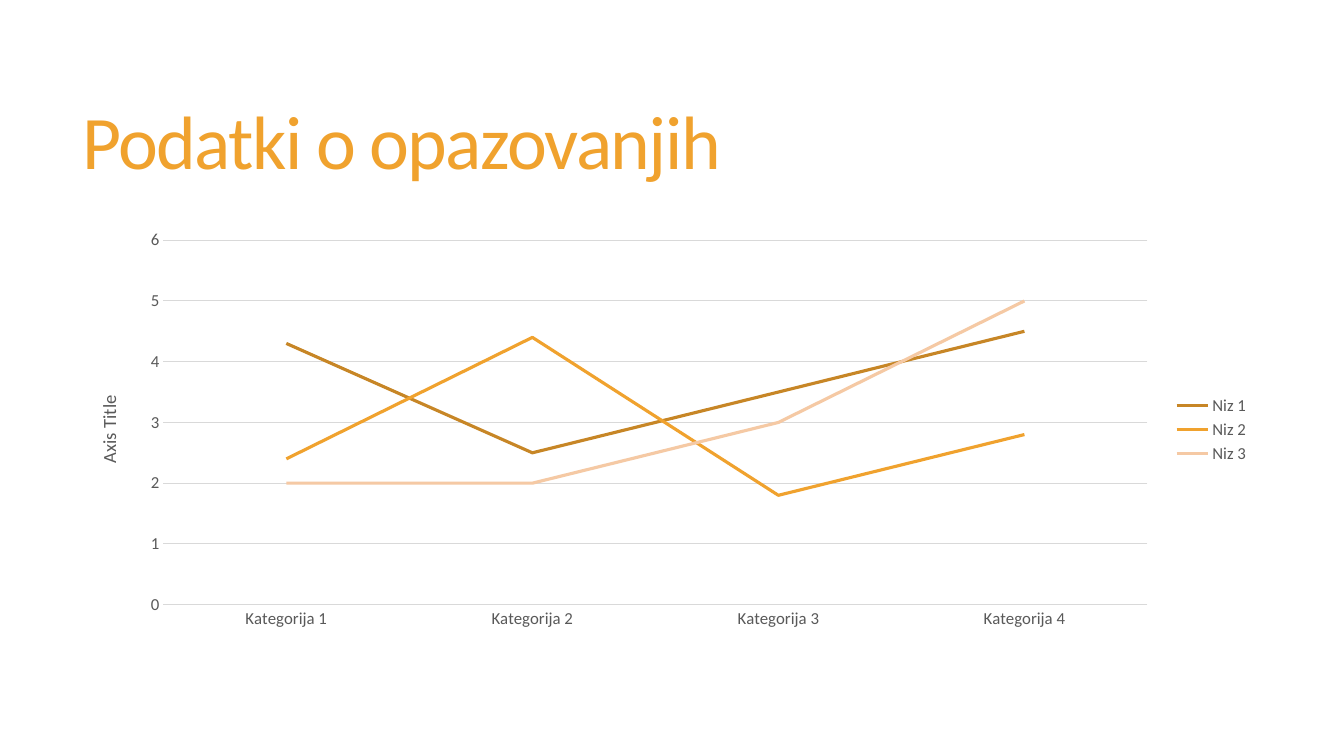
from pptx import Presentation
from pptx.chart.data import CategoryChartData
from pptx.dml.color import RGBColor
from pptx.enum.chart import XL_CHART_TYPE, XL_LEGEND_POSITION, XL_TICK_MARK
from pptx.enum.text import MSO_ANCHOR
from pptx.util import Pt

FONT = "Calibri"
COLORS = {
    "title": "F0A22E",
    "text": "595959",
    "grid": "D9D9D9",
    "Niz 1": "C78626",
    "Niz 2": "F0A22E",
    "Niz 3": "F5C9A4",
}
CATS = [f"Kategorija {n}" for n in range(1, 5)]
SERIES = {
    "Niz 1": (4.3, 2.5, 3.5, 4.5),
    "Niz 2": (2.4, 4.4, 1.8, 2.8),
    "Niz 3": (2, 2, 3, 5),
}


def rgb(name):
    return RGBColor.from_string(COLORS[name])


def set_font(font, size, color):
    font.name = FONT
    font.size = Pt(size)
    font.bold = False
    font.color.rgb = rgb(color)


def set_line(line, width, color):
    line.width = Pt(width)
    line.color.rgb = rgb(color)


def add_title(slide, box, text):
    frame = slide.shapes.add_textbox(*map(Pt, box)).text_frame
    frame.word_wrap = True
    frame.vertical_anchor = MSO_ANCHOR.MIDDLE
    frame.text = text
    para = frame.paragraphs[0]
    para.line_spacing = 0.85
    run = para.runs[0]
    set_font(run.font, 54, "title")
    run.font._element.set("spc", "-120")


def style_axes(chart):
    for axis in (chart.category_axis, chart.value_axis):
        axis.major_tick_mark = XL_TICK_MARK.NONE
        axis.minor_tick_mark = XL_TICK_MARK.NONE
        set_font(axis.tick_labels.font, 12, "text")
    set_line(chart.category_axis.format.line, 0.75, "grid")

    values = chart.value_axis
    values.minimum_scale, values.maximum_scale = 0, 6
    values.major_unit = 1
    values.format.line.fill.background()
    set_line(values.major_gridlines.format.line, 0.75, "grid")
    frame = values.axis_title.text_frame
    frame.text = "Axis Title"
    frame._txBody.bodyPr.set("rot", "-5400000")
    frame._txBody.bodyPr.set("vert", "horz")
    set_font(frame.paragraphs[0].runs[0].font, 13.3, "text")


def add_lines(slide, box):
    """Draw the line chart with its axes and legend."""
    data = CategoryChartData()
    data.categories = CATS
    for name, values in SERIES.items():
        data.add_series(name, values)
    chart = slide.shapes.add_chart(XL_CHART_TYPE.LINE, *map(Pt, box), data).chart
    chart.has_title = False
    set_font(chart.font, 12, "text")
    style_axes(chart)

    chart.has_legend = True
    chart.legend.position = XL_LEGEND_POSITION.RIGHT
    chart.legend.include_in_layout = False
    set_font(chart.legend.font, 12, "text")

    plot = chart.plots[0]
    plot.vary_by_categories = False
    for series in plot.series:
        series.smooth = False
        set_line(series.format.line, 2.25, series.name)


def main():
    deck = Presentation()
    deck.slide_width, deck.slide_height = Pt(960), Pt(540)
    slide = deck.slides.add_slide(deck.slide_layouts[6])
    add_title(slide, (52, 39.5, 848, 130.5), "Podatki o opazovanjih")
    add_lines(slide, (53.5, 158.5, 846.5, 296.5))
    deck.save("out.pptx")


if __name__ == "__main__":
    main()
